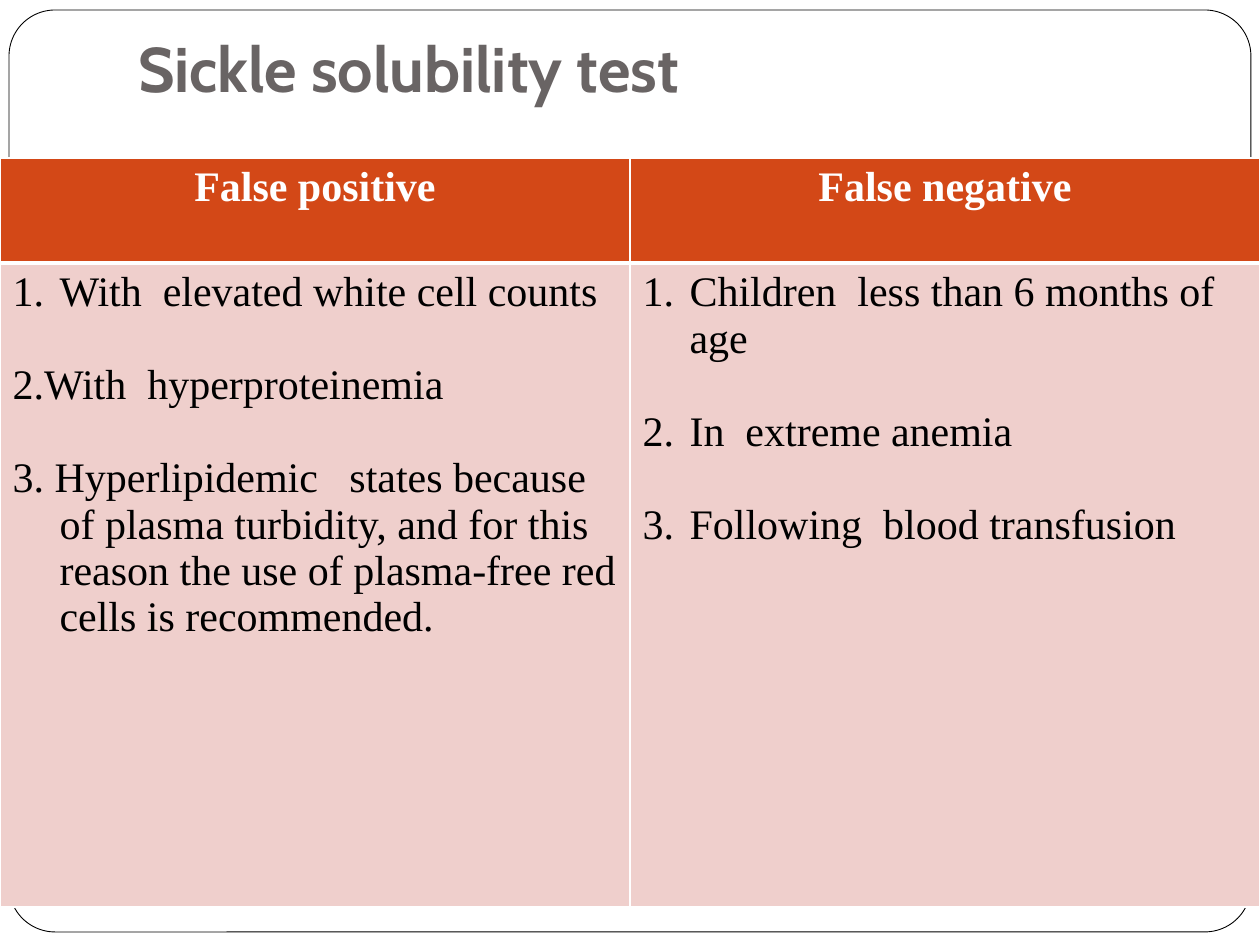
from dataclasses import dataclass

from lxml.etree import SubElement
from pptx import Presentation
from pptx.dml.color import RGBColor
from pptx.enum.shapes import MSO_SHAPE
from pptx.enum.text import MSO_ANCHOR, PP_ALIGN
from pptx.oxml.ns import qn
from pptx.slide import Slide
from pptx.table import _Cell
from pptx.text.text import TextFrame
from pptx.util import Emu, Pt

EMU_PER_PX = 914400 / 126
COLORS = {
    "white": "FFFFFF",
    "black": "000000",
    "title": "696464",
    "header": "D34817",
    "body": "EFCFCC",
}
BODY_FONT = "Times New Roman"
HANGING = 47
BLANK_LINE = 26.6


@dataclass(frozen=True)
class Reason:
    text: str
    numbered: bool = True


@dataclass(frozen=True)
class Column:
    heading: str
    reasons: tuple[Reason, ...]


COLUMNS = (
    Column("False positive", (
        Reason("With  elevated white cell counts"),
        Reason("2.With  hyperproteinemia", numbered=False),
        Reason("3. Hyperlipidemic   states because of plasma turbidity, and for this "
               "reason the use of plasma-free red cells is recommended.", numbered=False),
    )),
    Column("False negative", (
        Reason("Children  less than 6 months of age"),
        Reason("In  extreme anemia"),
        Reason("Following  blood transfusion"),
    )),
)


def px(length: int) -> Emu:
    return Emu(round(length * EMU_PER_PX))


def rgb(name: str) -> RGBColor:
    return RGBColor.from_string(COLORS[name])


def write_text(frame: TextFrame, text: str, *, first: bool = True, font: str = BODY_FONT,
               size: int = 24, color: str = "black", bold: bool = False,
               align: PP_ALIGN = PP_ALIGN.LEFT, hanging: int = 0,
               numbered: bool = False, space_before: float = 0) -> None:
    paragraph = frame.paragraphs[0] if first else frame.add_paragraph()
    properties = paragraph._p.get_or_add_pPr()
    if hanging:
        properties.set("marL", str(px(hanging)))
        properties.set("indent", str(-px(hanging)))
    if numbered:
        SubElement(properties, qn("a:buFont"), typeface="+mj-lt")
        SubElement(properties, qn("a:buAutoNum"), type="arabicPeriod")
    else:
        SubElement(properties, qn("a:buNone"))
    paragraph.alignment = align
    paragraph.space_before = Pt(space_before)
    run = paragraph.add_run()
    run.text = text
    run.font.name = font
    run.font.size = Pt(size)
    run.font.bold = bold
    run.font.color.rgb = rgb(color)


def format_cell(cell: _Cell, fill: str, top: int, bottom: int) -> None:
    properties = cell._tc.get_or_add_tcPr()
    for side, width in (("L", 1), ("R", 1), ("T", top), ("B", bottom)):
        border = SubElement(properties, qn(f"a:ln{side}"), w=str(Pt(width)))
        solid = SubElement(border, qn("a:solidFill"))
        SubElement(solid, qn("a:srgbClr"), val=COLORS["white"])
    cell.fill.solid()
    cell.fill.fore_color.rgb = rgb(fill)


def draw_frame(slide: Slide) -> None:
    shape = slide.shapes.add_shape(MSO_SHAPE.ROUNDED_RECTANGLE, px(9), px(10), px(1242), px(922))
    shape.adjustments[0] = 0.05
    shape.shadow.inherit = False
    shape.fill.solid()
    shape.fill.fore_color.rgb = rgb("white")
    shape.line.color.rgb = rgb("black")
    shape.line.width = Pt(0.5)


def draw_title(slide: Slide, text: str) -> None:
    frame = slide.shapes.add_textbox(px(126), px(30), px(1071), px(77)).text_frame
    frame.word_wrap = True
    frame.vertical_anchor = MSO_ANCHOR.TOP
    frame.margin_top = frame.margin_bottom = 0
    write_text(frame, text, font="Cabin", size=36, color="title", bold=True)


def draw_table(slide: Slide, columns: tuple[Column, ...]) -> None:
    table = slide.shapes.add_table(2, len(columns), 0, px(158), px(1260), px(749)).table
    table.horz_banding = False
    for row, height in zip(table.rows, (105, 644)):
        row.height = px(height)
    for index, column in enumerate(columns):
        header, body = table.cell(0, index), table.cell(1, index)
        format_cell(header, "header", top=1, bottom=3)
        format_cell(body, "body", top=3, bottom=1)
        write_text(header.text_frame, column.heading, color="white", bold=True,
                   align=PP_ALIGN.CENTER)
        for position, reason in enumerate(column.reasons):
            write_text(body.text_frame, reason.text, first=position == 0, hanging=HANGING,
                       numbered=reason.numbered, space_before=BLANK_LINE if position else 0)


def main() -> None:
    presentation = Presentation()
    presentation.slide_width = px(1260)
    presentation.slide_height = px(945)
    slide = presentation.slides.add_slide(presentation.slide_layouts[6])
    draw_frame(slide)
    draw_title(slide, "Sickle solubility test")
    draw_table(slide, COLUMNS)
    presentation.save("out.pptx")


if __name__ == "__main__":
    main()
